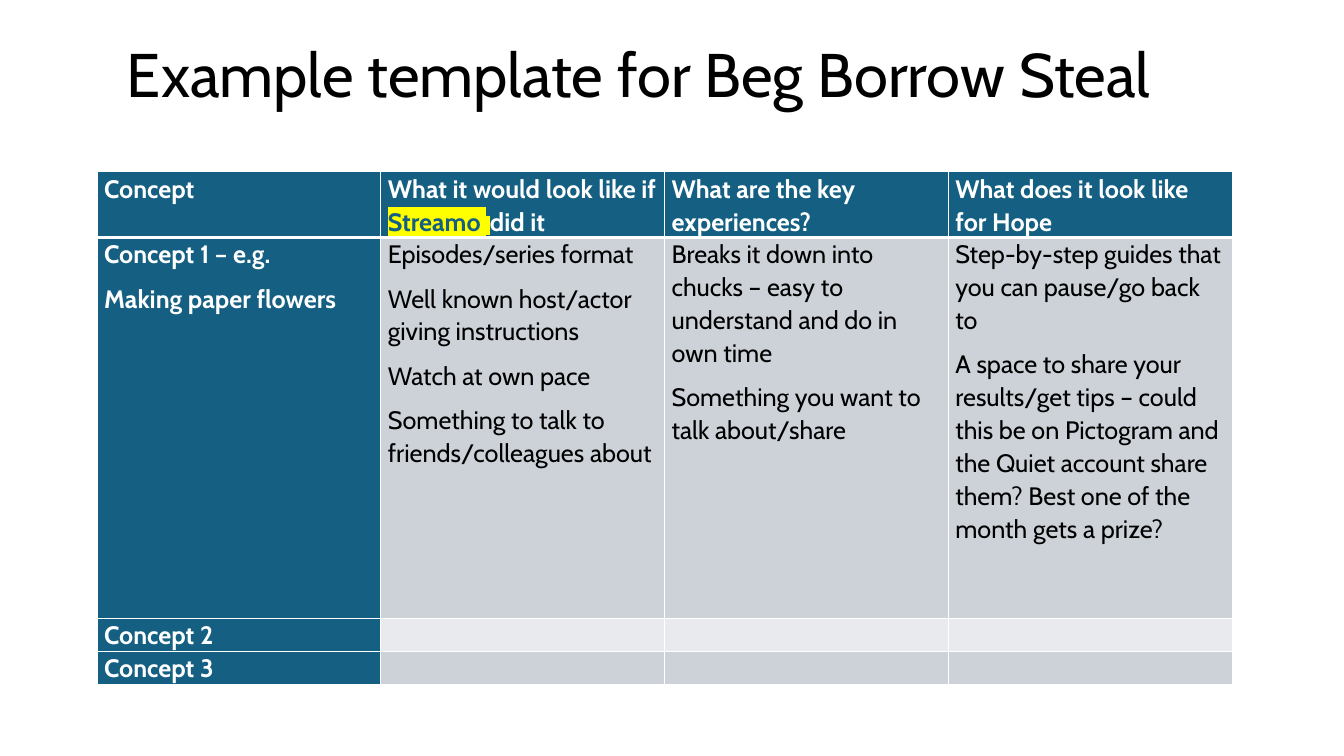
import pptx
import pptx.dml.color
import pptx.enum.text
import pptx.oxml.ns
import pptx.util
from lxml import etree

Pt = pptx.util.Pt
qn = pptx.oxml.ns.qn

THEME = {
    "font": "Cabin",
    "black": "000000",
    "white": "FFFFFF",
    "blue": "156082",
    "bands": ("CCD2D8", "E8EAED"),
    "glow": "FFFF00",
    "title": 44,
    "text": 18,
    "small": 11,
}
WIDTHS = [202.7] * 4
HEIGHTS = [44, 272, 22, 22]
ROWS = [
    [
        ["Concept"],
        [[
            ("What it would look like if ", {}),
            ("Streamo", {"color": THEME["blue"], "glow": True}),
            (" ", {"glow": True}),
            (" ", {"size": THEME["small"], "glow": True}),
            ("did it", {}),
        ]],
        ["What are the key experiences?"],
        ["What does it look like for Hope"],
    ],
    [
        ["Concept 1 – e.g.", "Making paper flowers"],
        [
            "Episodes/series format",
            "Well known host/actor giving instructions",
            "Watch at own pace",
            "Something to talk to friends/colleagues about",
        ],
        [
            "Breaks it down into chucks – easy to understand and do in own time",
            "Something you want to talk about/share",
        ],
        [
            "Step-by-step guides that you can pause/go back to",
            "A space to share your results/get tips – could this be on Pictogram "
            "and the Quiet account share them? Best one of the month gets a prize?",
        ],
    ],
    [["Concept 2"], [], [], []],
    [["Concept 3"], [], [], []],
]


def apply(target, values):
    """Set each attribute of the target from a dict."""
    for name, value in values.items():
        setattr(target, name, value)


def paint(fill, color):
    """Give a fill one solid colour."""
    fill.solid()
    fill.fore_color.rgb = pptx.dml.color.RGBColor.from_string(color)


def add_run(para, text, color, size=THEME["text"], bold=False, glow=False):
    """Add one styled run, with a highlight if asked."""
    run = para.add_run()
    run.text = text
    paint(run.font.fill, color)
    apply(run.font, {"name": THEME["font"], "size": Pt(size), "bold": bold})
    if glow:
        mark = etree.Element(qn("a:highlight"))
        etree.SubElement(mark, qn("a:srgbClr"), val=THEME["glow"])
        run.font.fill._xPr.find(qn("a:latin")).addprevious(mark)


def add_edge(cell, side, width):
    """Draw a white line on one side of a cell."""
    props = cell._tc.get_or_add_tcPr()
    line = etree.SubElement(props, qn(f"a:ln{side}"), w=str(int(Pt(width))))
    fill = etree.SubElement(line, qn("a:solidFill"))
    etree.SubElement(fill, qn("a:srgbClr"), val=THEME["white"])


def fill_cell(cell, paras, row, col):
    """Style a cell by its place and write its text."""
    head = row == 0 or col == 0
    thick = {0: "B", 1: "T"}.get(row)
    apply(cell, {"margin_left": Pt(5), "margin_right": Pt(5),
                 "margin_top": 0, "margin_bottom": 0})
    for side in "LRTB":
        add_edge(cell, side, 3 if side == thick else 1)
    paint(cell.fill, THEME["blue"] if head else THEME["bands"][(row - 1) % 2])
    frame = cell.text_frame
    for i, runs in enumerate(paras):
        para = frame.add_paragraph() if i else frame.paragraphs[0]
        apply(para, {"line_spacing": 1.07, "space_after": Pt(8)})
        for text, style in [(runs, {})] if isinstance(runs, str) else runs:
            base = {"color": THEME["white" if head else "black"], "bold": head}
            add_run(para, text, **{**base, **style})
    if not paras:
        etree.SubElement(frame.paragraphs[0]._p, qn("a:endParaRPr"),
                         sz=str(THEME["small"] * 100))


def add_title(slide, text):
    """Place and write the title."""
    title = slide.shapes.title
    apply(title, {"left": Pt(83.5), "top": Pt(3),
                  "width": Pt(828), "height": Pt(104.4)})
    apply(title.text_frame, {
        "word_wrap": True,
        "vertical_anchor": pptx.enum.text.MSO_ANCHOR.MIDDLE,
    })
    para = title.text_frame.paragraphs[0]
    apply(para, {"line_spacing": 0.9,
                 "alignment": pptx.enum.text.PP_ALIGN.LEFT})
    add_run(para, text, THEME["black"], THEME["title"])


def add_grid(slide, rows):
    """Add the table and fill its cells."""
    table = slide.shapes.add_table(
        len(rows), len(WIDTHS), Pt(69.4), Pt(122.6),
        Pt(sum(WIDTHS)), Pt(sum(HEIGHTS))).table
    for column, width in zip(table.columns, WIDTHS):
        column.width = Pt(width)
    for line, height in zip(table.rows, HEIGHTS):
        line.height = Pt(height)
    for r, cells in enumerate(rows):
        for c, paras in enumerate(cells):
            fill_cell(table.cell(r, c), paras, r, c)


def main():
    """Build and save the slide."""
    deck = pptx.Presentation()
    apply(deck, {"slide_width": Pt(960), "slide_height": Pt(540)})
    slide = deck.slides.add_slide(deck.slide_layouts[5])
    paint(slide.background.fill, THEME["white"])
    add_title(slide, "Example template for Beg Borrow Steal")
    add_grid(slide, ROWS)
    deck.save("out.pptx")


if __name__ == "__main__":
    main()
